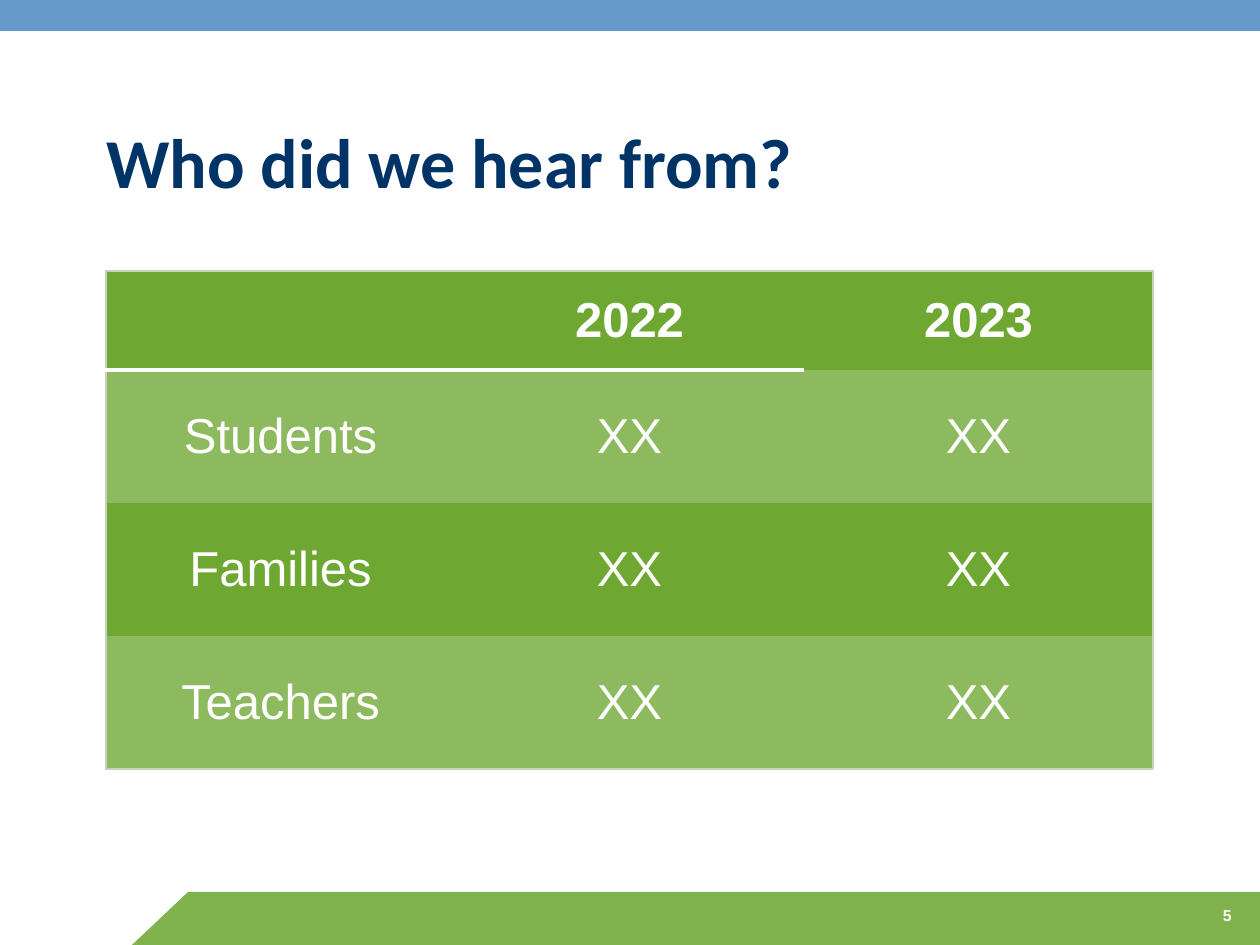
"""Build the survey response slide: title, table of counts by year, and footer."""
from lxml.etree import SubElement
from pptx import Presentation
from pptx.dml.color import RGBColor
from pptx.enum.shapes import MSO_SHAPE
from pptx.enum.text import MSO_ANCHOR, MSO_AUTO_SIZE, PP_ALIGN
from pptx.oxml.ns import qn
from pptx.util import Emu, Pt

SCALE = 914400 / 126
COLORS = {
    "navy": "003366", "blue": "6699CC", "footer": "80B34D", "white": "FFFFFF",
    "dark": "6EA832", "light": "8DBA5E", "edge": "C4D3BC",
}
NO_STYLE = "{2D5ABB26-0587-4C30-8999-92F81FD0307C}"


def px(*lengths):
    return [Emu(round(length * SCALE)) for length in lengths]


def write(frame, text, font, size, color, bold, align, anchor):
    frame.text = text
    frame.vertical_anchor = anchor
    para = frame.paragraphs[0]
    para.alignment = align
    values = {"name": font, "size": Pt(size), "bold": bold}
    for name, value in values.items():
        setattr(para.runs[0].font, name, value)
    para.runs[0].font.color.rgb = RGBColor.from_string(COLORS[color])


deck = Presentation()
deck.slide_width, deck.slide_height = px(1260, 945)
page = deck.slides.add_slide(deck.slide_layouts[5])

bands = [
    (MSO_SHAPE.RECTANGLE, (188, 892, 1072, 53), "footer"),
    (MSO_SHAPE.RIGHT_TRIANGLE, (132, 892, 56, 53), "footer"),
    (MSO_SHAPE.RECTANGLE, (0, 0, 1260, 31), "blue"),
]
for kind, place, color in bands:
    band = page.shapes.add_shape(kind, *px(*place))
    band.shadow.inherit = False
    band.fill.solid()
    band.fill.fore_color.rgb = RGBColor.from_string(COLORS[color])
    band.line.fill.background()
    if kind == MSO_SHAPE.RIGHT_TRIANGLE:
        band.element.spPr.xfrm.set("flipH", "1")

title = page.shapes.title
title.left, title.top, title.width, title.height = px(94, 98, 1072, 111)
write(title.text_frame, "Who did we hear from?", "Calibri", 40, "navy", True,
      PP_ALIGN.LEFT, MSO_ANCHOR.BOTTOM)
title.text_frame.auto_size = MSO_AUTO_SIZE.NONE

rows = [
    ["", "2022", "2023"],
    ["Students", "XX", "XX"],
    ["Families", "XX", "XX"],
    ["Teachers", "XX", "XX"],
]
heights = px(99, 133, 133, 133)
frame = page.shapes.add_table(4, 3, *px(106, 271, 1047, 498))
table = frame.table
table.first_row = table.horz_banding = False
table._tbl.tblPr.find(qn("a:tableStyleId")).text = NO_STYLE
for column in table.columns:
    column.width = px(349)[0]
for r, texts in enumerate(rows):
    table.rows[r].height = heights[r]
    for c, text in enumerate(texts):
        cell = table.cell(r, c)
        if text:
            write(cell.text_frame, text, "Arial", 28, "white", r == 0,
                  PP_ALIGN.CENTER, None)
        cell.vertical_anchor = MSO_ANCHOR.MIDDLE
        borders = [
            ("a:lnL", c == 0, "edge", 0.75),
            ("a:lnR", c == 2, "edge", 0.75),
            ("a:lnT", r == 0, "edge", 0.75),
            ("a:lnB", r == 0 and c < 2, "white", 3),
            ("a:lnB", r == 3, "edge", 0.75),
        ]
        for side, shown, color, width in borders:
            if shown:
                line = SubElement(cell._tc.get_or_add_tcPr(), qn(side), w=str(Pt(width)))
                fill = SubElement(line, qn("a:solidFill"))
                SubElement(fill, qn("a:srgbClr"), val=COLORS[color])
        cell.fill.solid()
        shade = "light" if r % 2 else "dark"
        cell.fill.fore_color.rgb = RGBColor.from_string(COLORS[shade])

number = page.shapes.add_textbox(*px(1096, 900, 148, 32))
number.text_frame.word_wrap = True
write(number.text_frame, "5", "Arial", 9, "white", True, PP_ALIGN.RIGHT, MSO_ANCHOR.TOP)

deck.save("out.pptx")
